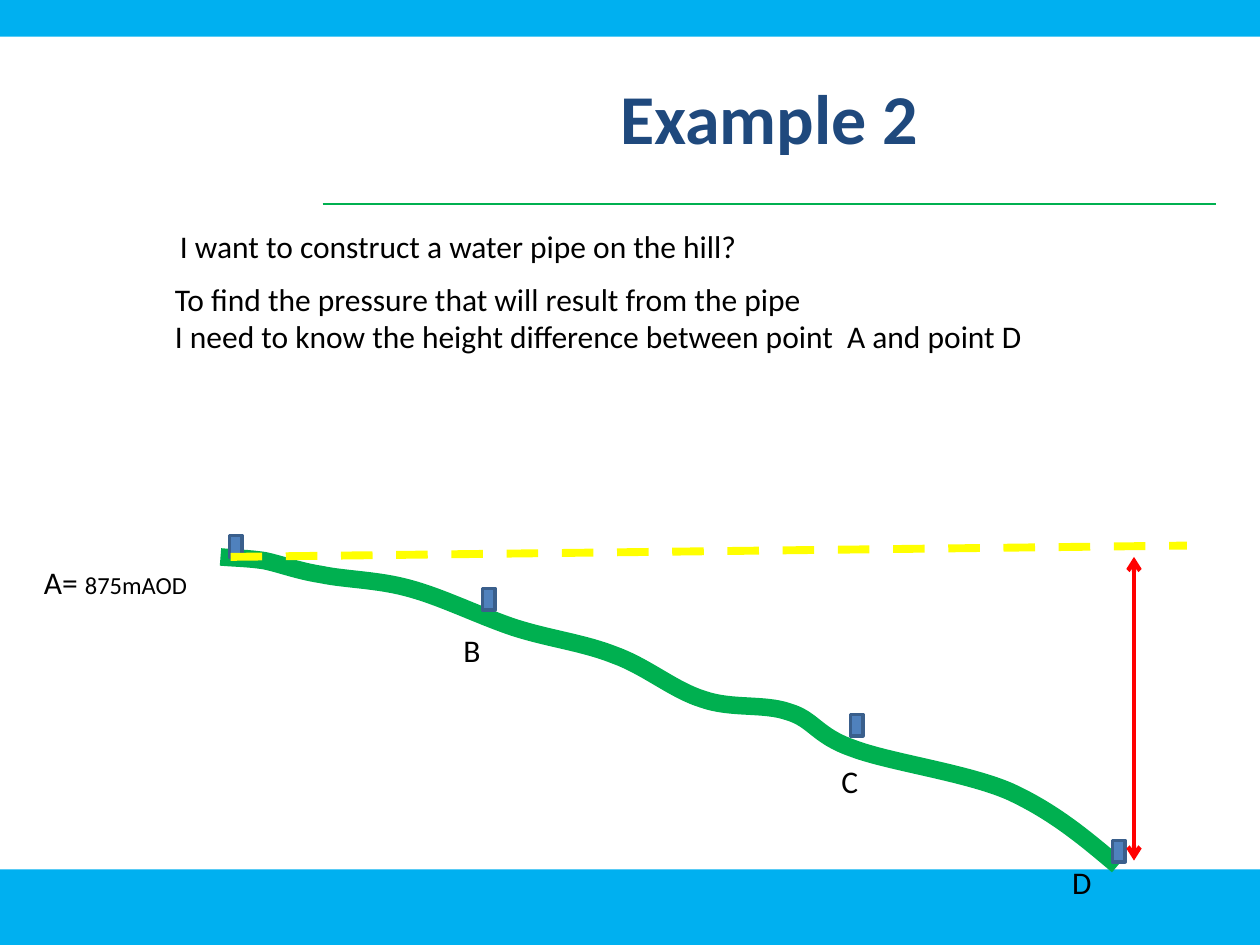
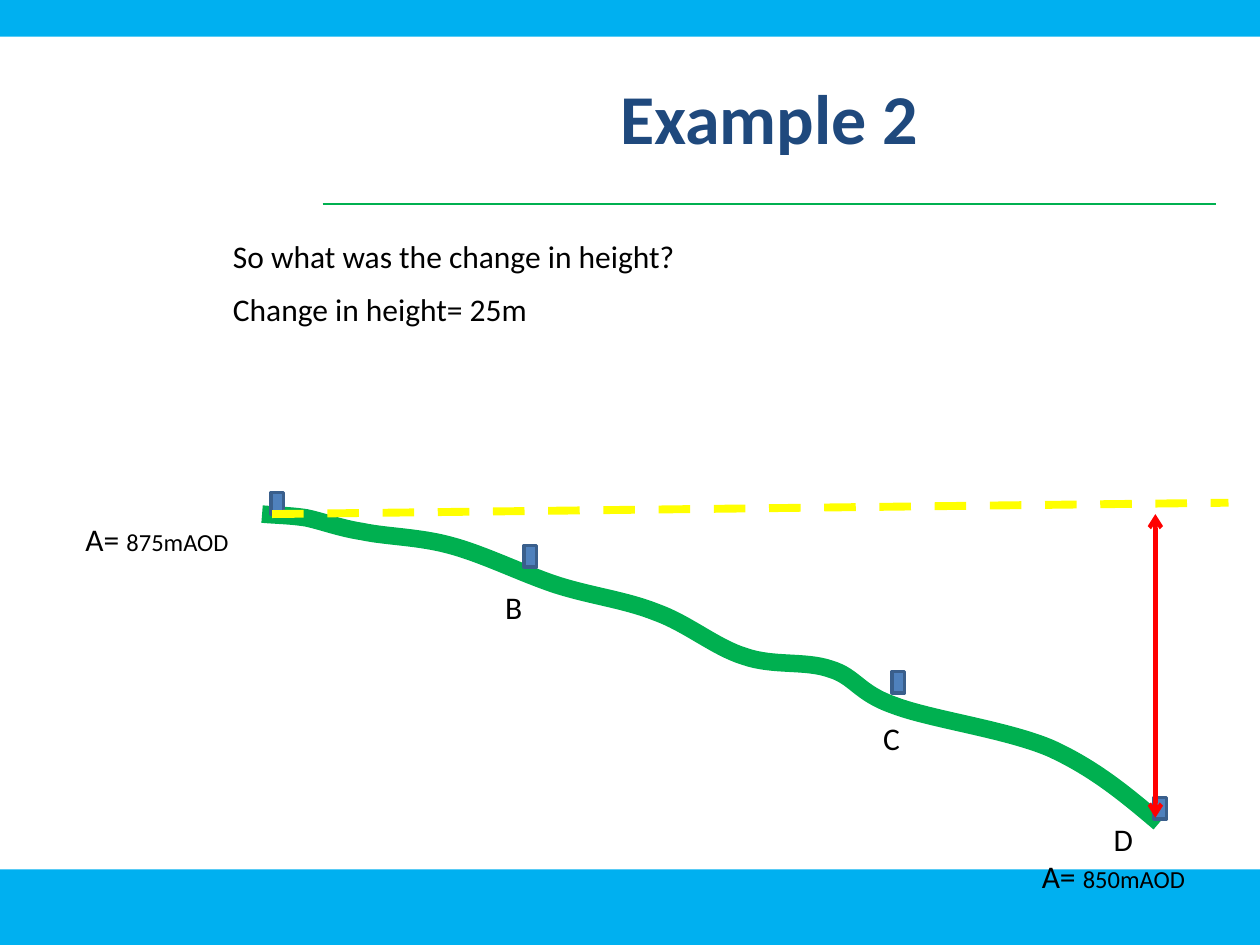
from lxml import etree
from pptx import Presentation
from pptx.dml.color import RGBColor
from pptx.enum import dml, shapes, text
from pptx.oxml import ns
from pptx.util import Inches, Pt

FONT = "Calibri"
COLORS = {
    "band": "00B0F0",
    "title": "1F497D",
    "body": "000000",
    "hill": "00B050",
    "peg": "4F81BD",
    "peg_edge": "3A5F8C",
    "level": "FFFF00",
    "drop": "FF0000",
}

# Hill profile relative to point A, from D up to A: a start point,
# then cubic Bézier segments (two controls and an end point each).
HILL_START = (7.12, 2.45)
HILL_CURVES = [
    [(6.86, 2.23), (6.61, 2.02), (6.26, 1.86)],
    [(5.91, 1.71), (5.31, 1.63), (5.02, 1.52)],
    [(4.73, 1.42), (4.71, 1.29), (4.51, 1.23)],
    [(4.31, 1.16), (4.06, 1.21), (3.83, 1.13)],
    [(3.60, 1.06), (3.38, 0.87), (3.13, 0.78)],
    [(2.88, 0.68), (2.61, 0.65), (2.33, 0.56)],
    [(2.06, 0.47), (1.76, 0.32), (1.50, 0.25)],
    [(1.25, 0.18), (0.99, 0.18), (0.80, 0.14)],
    [(0.61, 0.11), (0.49, 0.06), (0.35, 0.03)],
    [(0.22, 0.01), (0.11, 0.01), (0, 0)],
]
PEGS = [(0.07, -0.17), (7.08, 2.25), (2.08, 0.25), (5, 1.25)]
POINT_LABELS = [("B", 1.83, 0.54), ("C", 4.83, 1.58), ("D", 6.66, 2.38)]


def rgb(name):
    return RGBColor.from_string(COLORS[name])


def style_line(line, color, width):
    line.color.rgb = rgb(color)
    line.width = Pt(width)


def format_text(frame, lines, size=18, color="body", bold=False,
                align=text.PP_ALIGN.LEFT):
    """Fill a frame; each line is a string or a list of (text, size) runs."""
    frame.word_wrap = True
    for index, line in enumerate(lines):
        paragraph = frame.paragraphs[0] if index == 0 else frame.add_paragraph()
        paragraph.alignment = align
        runs = [(line, size)] if isinstance(line, str) else line
        for words, run_size in runs:
            run = paragraph.add_run()
            run.text = words
            run.font.name = FONT
            run.font.size = Pt(run_size)
            run.font.bold = bold
            run.font.color.rgb = rgb(color)


def add_text(slide, lines, left, top, width, height=0.4, **style):
    box = slide.shapes.add_textbox(
        Inches(left), Inches(top), Inches(width), Inches(height))
    format_text(box.text_frame, lines, **style)


def add_rectangle(slide, left, top, width, height, fill, edge=None):
    shape = slide.shapes.add_shape(
        shapes.MSO_SHAPE.RECTANGLE,
        Inches(left), Inches(top), Inches(width), Inches(height))
    shape.shadow.inherit = False
    shape.fill.solid()
    shape.fill.fore_color.rgb = rgb(fill)
    if edge:
        style_line(shape.line, edge, 2)
    else:
        shape.line.fill.background()
    return shape


def add_line(slide, start, end, color, width, dashed=False, arrows=False):
    connector = slide.shapes.add_connector(
        shapes.MSO_CONNECTOR.STRAIGHT,
        *(Inches(value) for value in (*start, *end)))
    style_line(connector.line, color, width)
    if dashed:
        connector.line.dash_style = dml.MSO_LINE.DASH
    if arrows:
        line_element = connector.line._get_or_add_ln()
        for tag in ("a:headEnd", "a:tailEnd"):
            etree.SubElement(line_element, ns.qn(tag), type="arrow")
    etree.SubElement(connector._element.spPr, ns.qn("a:effectLst"))
    return connector


def bend_segments(freeform, curves):
    """Turn each straight segment of a freeform into a cubic Bézier curve."""
    segments = list(freeform._element.iter(ns.qn("a:lnTo")))
    for segment, curve in zip(segments, curves):
        bend = etree.Element(ns.qn("a:cubicBezTo"))
        for x, y in curve:
            etree.SubElement(bend, ns.qn("a:pt"),
                             x=str(Inches(x)), y=str(Inches(y)))
        segment.getparent().replace(segment, bend)


def add_hill(slide, left, top):
    anchors = [HILL_START] + [curve[-1] for curve in HILL_CURVES]
    points = [(Inches(left + x), Inches(top + y)) for x, y in anchors]
    builder = slide.shapes.build_freeform(*points[0])
    builder.add_line_segments(points[1:], close=False)
    hill = builder.convert_to_shape()
    bend_segments(hill, HILL_CURVES)
    hill.shadow.inherit = False
    hill.fill.background()
    style_line(hill.line, "hill", 10)


def add_level_label(slide, level, left, top):
    add_text(slide, [[("A= ", 18), (level, 14)]], left, top, 1.5)


def add_survey(slide, left, top, drop_x):
    """Draw the hill with its survey points; left and top locate point A."""
    add_hill(slide, left, top)
    for x, y in PEGS:
        add_rectangle(slide, left + x, top + y, 0.1, 0.17, "peg", "peg_edge")
    for name, x, y in POINT_LABELS:
        add_text(slide, [name], left + x, top + y, 0.42)
    add_line(slide, (drop_x, top), (drop_x, top + 2.41), "drop", 2.5, arrows=True)
    add_line(slide, (left + 0.08, top), (left + 7.67, top - 0.09),
             "level", 4.5, dashed=True)
    add_level_label(slide, "875mAOD", left - 1.5, top)


def move_frame_to_layout(slide):
    """Draw the bands and title rule, then place them behind the layout."""
    frame = [
        add_rectangle(slide, 0, 6.9, 10, 0.6, "band"),
        add_line(slide, (2.56, 1.62), (9.65, 1.62), "hill", 0.75),
        add_rectangle(slide, 0, 0, 10, 0.29, "band"),
    ]
    tree = slide.slide_layout.shapes._spTree
    for position, shape in enumerate(frame, start=2):
        tree.insert(position, shape._element)


def add_example_slide(presentation, heading):
    slide = presentation.slides.add_slide(presentation.slide_layouts[5])
    title = slide.shapes.title
    title.left, title.top = Inches(2.56), Inches(0.3)
    title.width, title.height = Inches(7.09), Inches(1.25)
    title.text_frame.vertical_anchor = text.MSO_ANCHOR.MIDDLE
    format_text(title.text_frame, [heading], size=40, color="title", bold=True,
                align=text.PP_ALIGN.CENTER)
    return slide


def main():
    presentation = Presentation()
    presentation.slide_width = Inches(10)
    presentation.slide_height = Inches(7.5)

    question = add_example_slide(presentation, "Example 2")
    move_frame_to_layout(question)
    add_text(question, ["I want to construct a water pipe on the hill?"],
             1.33, 1.75, 4.67)
    add_text(question, [
        "To find the pressure that will result from the pipe",
        "I need to know the height difference between point  A and point D",
    ], 1.29, 2.17, 7.48, 0.71)
    add_survey(question, 1.75, 4.42, drop_x=9)

    answer = add_example_slide(presentation, "Example 2")
    add_text(answer, ["So what was the change in height?"], 1.75, 1.83, 4.11)
    add_text(answer, ["Change in height= 25m"], 1.75, 2.25, 2.82)
    add_survey(answer, 2.08, 4.08, drop_x=9.17)
    add_level_label(answer, "850mAOD", 8.17, 6.75)

    presentation.save("out.pptx")


if __name__ == "__main__":
    main()
